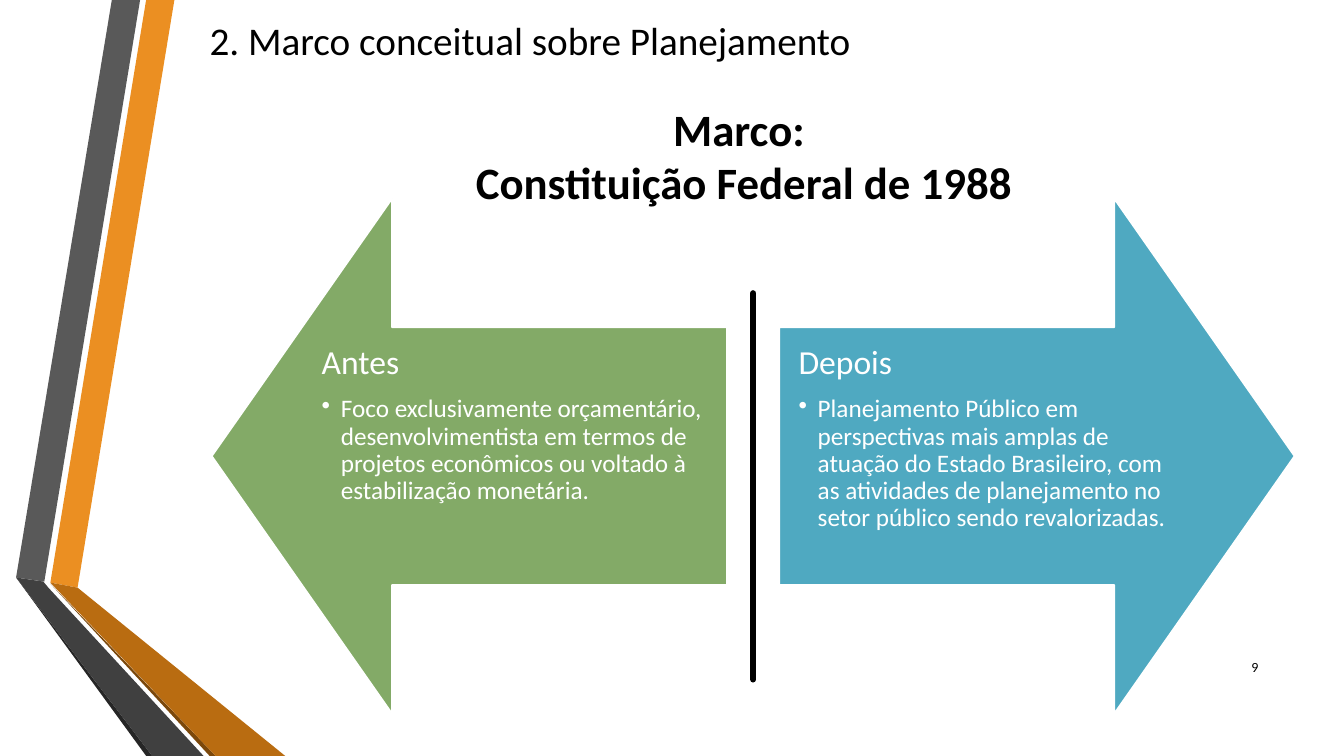
import pptx
import pptx.dml.color
import pptx.enum.shapes
import pptx.enum.text
import pptx.oxml
import pptx.oxml.ns
import pptx.util

PX = 9144
FONT = "Calibri"
COLORS = {
    "orange": "EB8F22", "gray": "595959", "black_fold": "262626",
    "brown_fold": "7B480B", "brown": "B96C11", "dark_gray": "404040",
    "green": "83AA67", "blue": "4FA9C1", "black": "000000", "white": "FFFFFF",
}
RIBBONS = [
    ("orange", [(34, 578), (61, 583), (157, 0), (129, 0)]),
    ("gray", [(123, 0), (95, 0), (0, 573), (28, 577)]),
    ("black_fold", [(0, 573), (129, 750), (135, 750)]),
    ("brown_fold", [(34, 579), (192, 750), (198, 750)]),
    ("brown", [(34, 578), (198, 750), (267, 750), (61, 583)]),
    ("dark_gray", [(186, 750), (32, 583), (27, 577), (0, 573), (135, 750)]),
]
SHAPE = pptx.enum.shapes.MSO_SHAPE
ALIGN = pptx.enum.text.PP_ALIGN
ANCHOR = pptx.enum.text.MSO_ANCHOR


def px(*lengths):
    return [pptx.util.Emu(n * PX) for n in lengths]


def rgb(name):
    return pptx.dml.color.RGBColor.from_string(COLORS[name])


def add_run(p, text, size, color="black", bold=False):
    r = p.add_run()
    r.text = text
    r.font.name = FONT
    r.font.size = pptx.util.Pt(size)
    r.font.bold = bold
    r.font.color.rgb = rgb(color)


def add_frame(slide, box, anchor=ANCHOR.MIDDLE):
    tf = slide.shapes.add_textbox(*px(*box)).text_frame
    tf.word_wrap = True
    tf.vertical_anchor = anchor
    return tf


def add_lines(slide, box, lines, size, align=ALIGN.LEFT, bold=False):
    tf = add_frame(slide, box)
    for i, line in enumerate(lines):
        p = tf.add_paragraph() if i else tf.paragraphs[0]
        p.alignment = align
        add_run(p, line, size, bold=bold)


def add_ribbons(slide, left, top):
    for color, points in RIBBONS:
        placed = [(left + x, top + y) for x, y in points]
        builder = slide.shapes.build_freeform(*placed[0], scale=PX)
        builder.add_line_segments(placed[1:], close=True)
        sp = builder.convert_to_shape()
        sp.shadow.inherit = False
        sp.fill.solid()
        sp.fill.fore_color.rgb = rgb(color)
        sp.line.fill.background()


def set_bullet(p, indent):
    pPr = p._p.get_or_add_pPr()
    pPr.set("marL", str(indent * PX))
    pPr.set("indent", str(-indent * PX))
    bullet = pptx.oxml.parse_xml(
        f'<a:buChar {pptx.oxml.ns.nsdecls("a")} char="•"/>')
    pPr.append(bullet)


def add_arrow(slide, box, shape, color, text_offset, heading, body):
    left, top, width, height = box
    sp = slide.shapes.add_shape(shape, *px(*box))
    sp.shadow.inherit = False
    sp.adjustments[0] = 0.5
    sp.adjustments[1] = 0.35
    sp.fill.solid()
    sp.fill.fore_color.rgb = rgb(color)
    sp.line.color.rgb = rgb("white")
    sp.line.width = pptx.util.Pt(1.25)

    text_box = (left + text_offset, top + height // 4, width - 90, height // 2)
    tf = add_frame(slide, text_box, ANCHOR.TOP)
    tf.margin_left, tf.margin_top, tf.margin_right, tf.margin_bottom = px(*[19] * 4)
    p = tf.paragraphs[0]
    p.line_spacing = 0.9
    p.space_after = pptx.util.Pt(10)
    add_run(p, heading, 24, "white")
    p = tf.add_paragraph()
    p.line_spacing = 0.9
    set_bullet(p, 19)
    add_run(p, body, 18, "white")


def add_divider(slide, x, top, bottom):
    line = slide.shapes.add_connector(
        pptx.enum.shapes.MSO_CONNECTOR.STRAIGHT, *px(x, top, x, bottom))
    line.line.color.rgb = rgb("black")
    line.line.width = pptx.util.Pt(4.5)
    line.line._get_or_add_ln().set("cap", "rnd")
    spPr = line._element.spPr
    spPr.append(pptx.oxml.parse_xml(
        f'<a:effectLst {pptx.oxml.ns.nsdecls("a")}/>'))


def main():
    prs = pptx.Presentation()
    prs.slide_width, prs.slide_height = px(1333, 750)
    slide = prs.slides.add_slide(prs.slide_layouts[6])
    add_ribbons(slide, 16, 0)
    add_lines(slide, (198, -7, 692, 94),
              ["2. Marco conceitual sobre Planejamento"], 28)
    add_lines(slide, (405, 76, 666, 156),
              ["Marco: ", "Constituição Federal de 1988"], 32, ALIGN.CENTER, True)
    add_arrow(slide, (210, 197, 511, 511), SHAPE.LEFT_ARROW, "green", 90, "Antes",
              "Foco exclusivamente orçamentário, desenvolvimentista em termos de "
              "projetos econômicos ou voltado à estabilização monetária.")
    add_arrow(slide, (773, 197, 511, 511), SHAPE.RIGHT_ARROW, "blue", 0, "Depois",
              "Planejamento Público em perspectivas mais amplas de atuação do "
              "Estado Brasileiro, com as atividades de planejamento no setor "
              "público sendo revalorizadas.")
    add_divider(slide, 747, 291, 674)
    add_lines(slide, (1198, 642, 60, 40), ["9"], 10, ALIGN.RIGHT)
    prs.save("out.pptx")


if __name__ == "__main__":
    main()
